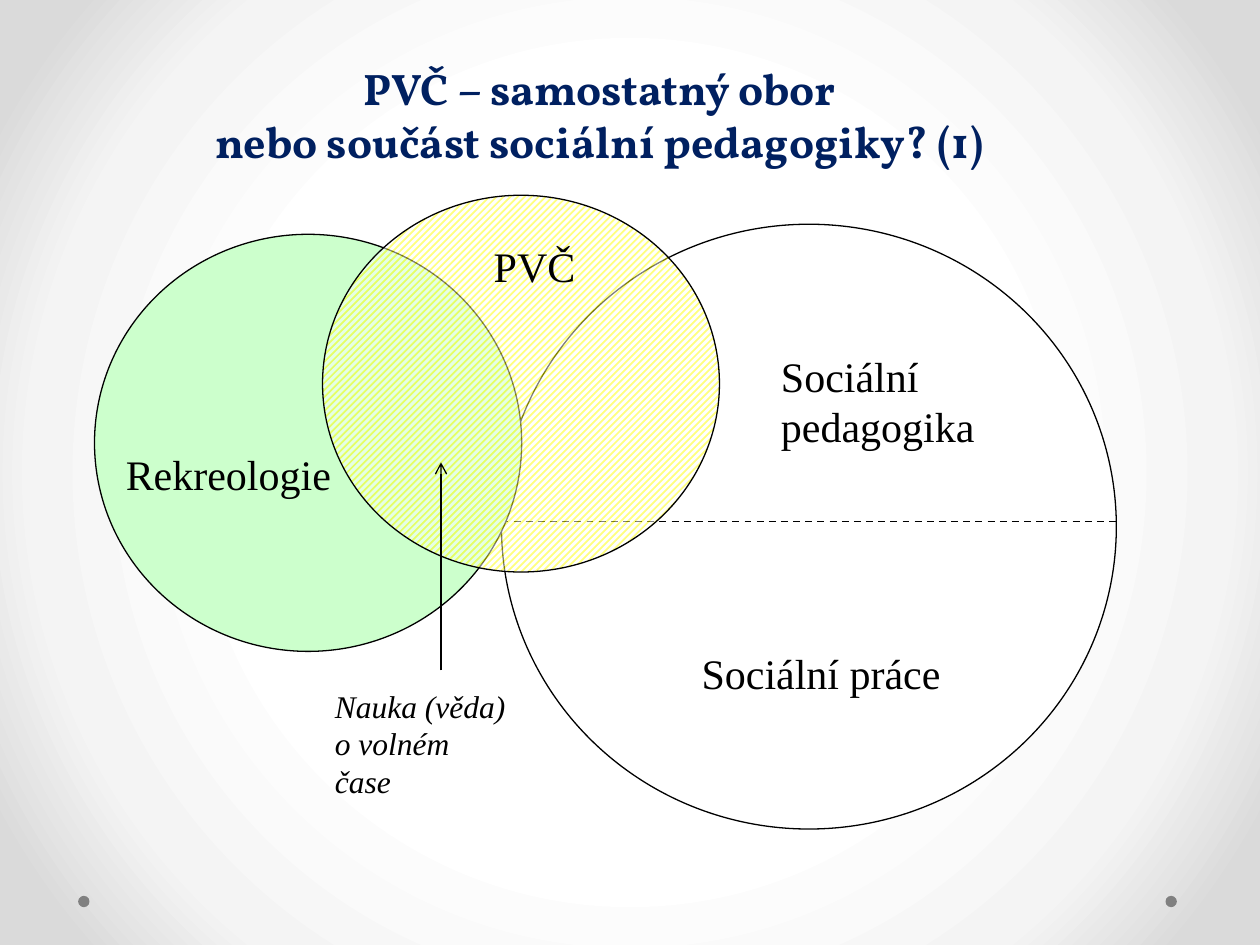
from pptx import Presentation
from pptx.dml.color import RGBColor
from pptx.enum.dml import MSO_LINE, MSO_PATTERN
from pptx.enum.shapes import MSO_CONNECTOR, MSO_SHAPE
from pptx.enum.text import MSO_ANCHOR, PP_ALIGN
from pptx.oxml import parse_xml
from pptx.oxml.ns import nsdecls, qn
from pptx.util import Inches, Pt
from lxml.etree import SubElement

BLACK = RGBColor(0x00, 0x00, 0x00)
WHITE = RGBColor(0xFF, 0xFF, 0xFF)
MIST = RGBColor(0xF4, 0xF4, 0xF4)
SILVER = RGBColor(0xDA, 0xDA, 0xDA)
GREY = RGBColor(0x80, 0x80, 0x80)
NAVY = RGBColor(0x00, 0x20, 0x60)
GREEN = RGBColor(0xCC, 0xFF, 0xCC)
YELLOW = RGBColor(0xFF, 0xFF, 0x00)

COLUMNS, ROWS = 100, 75


class VennSlide:
    body_font = "Times New Roman"
    title_font = "Vollkorn"
    outline = Pt(0.75)

    def __init__(self, presentation):
        self.slide = presentation.slides.add_slide(presentation.slide_layouts[6])
        self.column = presentation.slide_width / COLUMNS
        self.row = presentation.slide_height / ROWS

    def place(self, *lengths):
        units = (self.column, self.row) * 2
        return [round(length * unit) for length, unit in zip(lengths, units)]

    def background(self, stops):
        colours = "".join(
            f'<a:gs pos="{share * 1000}"><a:srgbClr val="{colour}"/></a:gs>'
            for share, colour in stops
        )
        background = parse_xml(
            f'<p:bg {nsdecls("p", "a")}><p:bgPr><a:gradFill rotWithShape="1">'
            f'<a:gsLst>{colours}</a:gsLst><a:path path="circle">'
            '<a:fillToRect l="50000" t="50000" r="50000" b="50000"/></a:path>'
            '</a:gradFill><a:effectLst/></p:bgPr></p:bg>'
        )
        self.slide.element.cSld.insert(0, background)

    def ellipse(self, area, colour, outlined=True):
        shape = self.slide.shapes.add_shape(MSO_SHAPE.OVAL, *self.place(*area))
        shape.shadow.inherit = False
        shape.fill.solid()
        shape.fill.fore_color.rgb = colour
        if outlined:
            shape.line.color.rgb = BLACK
            shape.line.width = self.outline
        else:
            shape.line.fill.background()
        return shape

    def hatched_ellipse(self, area, colour, opacity):
        shape = self.ellipse(area, colour)
        shape.fill.patterned()
        shape.fill.pattern = MSO_PATTERN.WIDE_UPWARD_DIAGONAL
        shape.fill.fore_color.rgb = colour
        shape.fill.back_color.rgb = WHITE
        pattern = shape.element.spPr.find(qn("a:pattFill"))
        for colour_element in pattern.iter(qn("a:srgbClr")):
            SubElement(colour_element, qn("a:alpha"), val=str(opacity * 1000))

    def line(self, start, end, width, dashed=False, arrow=False):
        connector = self.slide.shapes.add_connector(
            MSO_CONNECTOR.STRAIGHT, *self.place(*start, *end)
        )
        connector.line.color.rgb = BLACK
        connector.line.width = width
        if dashed:
            connector.line.dash_style = MSO_LINE.DASH
        if arrow:
            SubElement(connector.line._get_or_add_ln(), qn("a:tailEnd"), type="arrow")
        SubElement(connector.element.spPr, qn("a:effectLst"))

    def text(self, area, lines, size=24, italic=False, wrap=False):
        box = self.slide.shapes.add_textbox(*self.place(*area))
        frame = box.text_frame
        frame.word_wrap = wrap
        frame.text = "\n".join(lines)
        for paragraph in frame.paragraphs:
            font = paragraph.font
            font.name = self.body_font
            font.size = Pt(size)
            font.italic = italic
            font.color.rgb = BLACK
        return frame

    def title(self, area, lines):
        frame = self.text(area, ["\v".join(lines)], size=25.2, wrap=True)
        frame.vertical_anchor = MSO_ANCHOR.TOP
        paragraph = frame.paragraphs[0]
        paragraph.alignment = PP_ALIGN.CENTER
        paragraph.line_spacing = Pt(30.3)
        paragraph.font.name = self.title_font
        paragraph.font.bold = True
        paragraph.font.color.rgb = NAVY


def main():
    presentation = Presentation()
    presentation.slide_width = Inches(10)
    presentation.slide_height = Inches(7.5)

    venn = VennSlide(presentation)
    venn.background([(50, WHITE), (76, MIST), (92, SILVER)])
    for left in (92.5, 6.2):
        venn.ellipse((left, 71.1, 0.9, 0.9), GREY, outlined=False)
    venn.title(
        (5.1, 4.4, 85, 8.7),
        ["PVČ – samostatný obor", "nebo součást sociální pedagogiky? (1)"],
    )

    venn.ellipse((39.8, 17.8, 48.8, 48), WHITE)
    venn.line((39.8, 41.4), (88.6, 41.4), Pt(1), dashed=True)
    venn.ellipse((7.5, 18.6, 33.9, 33.1), GREEN)
    venn.hatched_ellipse((25.6, 15.5, 31.5, 29.9), YELLOW, opacity=50)

    venn.text((9, 35.1, 18.3, 5), ["Rekreologie"])
    venn.text((38.2, 18.6, 8.5, 5), ["PVČ"])
    venn.text((61, 27.3, 17.4, 9), ["Sociální", "pedagogika"])
    venn.text((54.7, 50.9, 21, 5), ["Sociální práce"])
    venn.line((35, 53.2), (35, 36.7), venn.outline, arrow=True)
    venn.text(
        (25.6, 54, 15.6, 10),
        ["Nauka (věda)", "o volném", "čase"],
        size=18,
        italic=True,
        wrap=True,
    )
    presentation.save("out.pptx")


if __name__ == "__main__":
    main()
